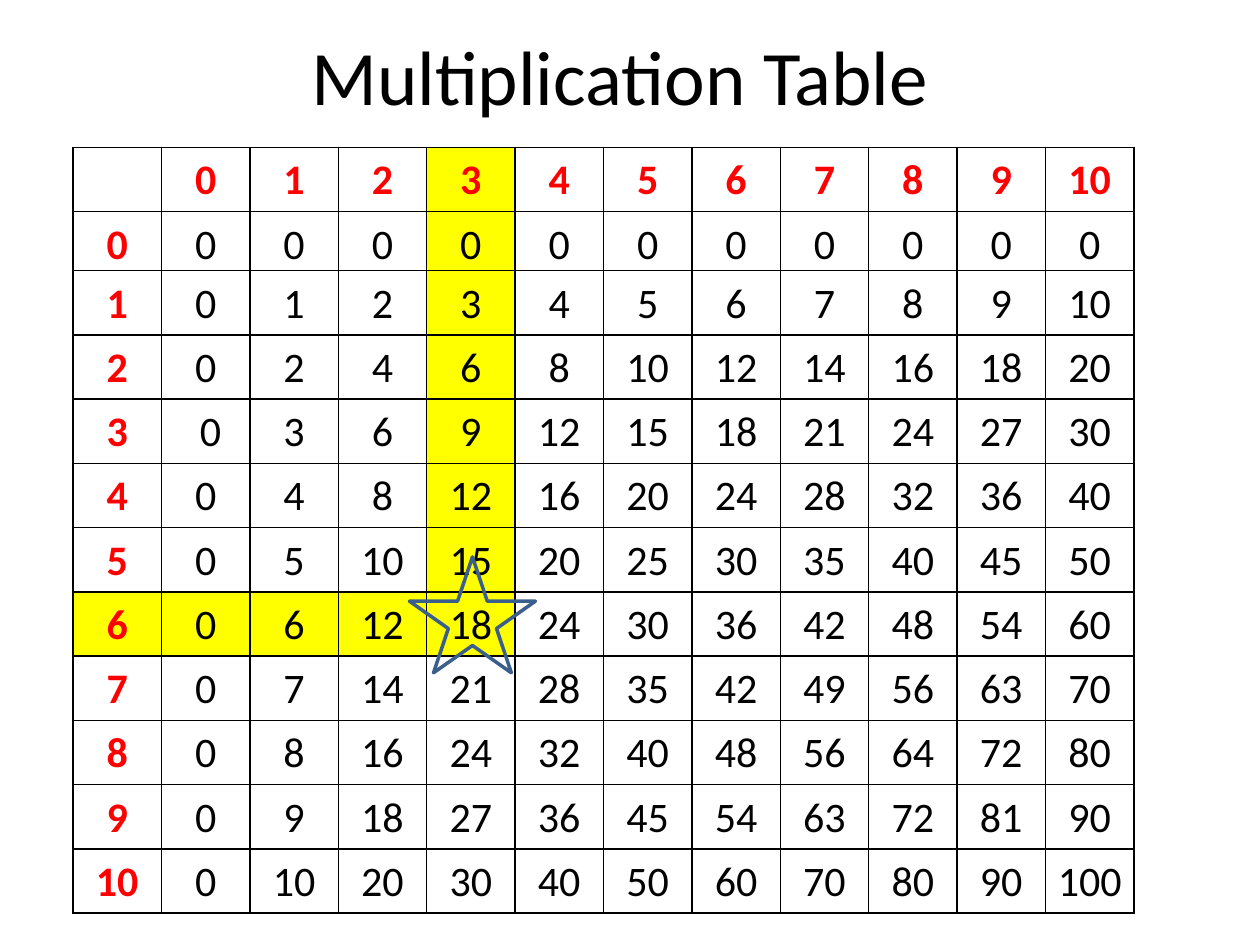
from dataclasses import dataclass

from lxml.etree import SubElement
from pptx import Presentation
from pptx.dml.color import RGBColor
from pptx.enum.shapes import MSO_SHAPE as Shape
from pptx.enum.text import MSO_ANCHOR as Anchor, PP_ALIGN as Align
from pptx.oxml.ns import qn
from pptx.util import Inches, Pt


@dataclass(frozen=True)
class Theme:
    font: str = "Calibri"
    ink: str = "000000"
    factor: str = "FF0000"
    highlight: str = "FFFF00"
    star: str = "3A5F8C"
    title_size: int = 44
    number_size: int = 24
    border_width: int = 1
    star_width: int = 2


THEME = Theme()
FACTORS = range(11)
COLUMN_FACTOR, ROW_FACTOR = 3, 6
SPACED_ZERO = (3, 0)


def style_paragraph(paragraph, size, color, bold=False):
    paragraph.alignment = Align.CENTER
    font = paragraph.font
    font.name = THEME.font
    font.size = Pt(size)
    font.bold = bold
    font.color.rgb = RGBColor.from_string(color)


def add_title(slide, text):
    title = slide.shapes.title
    title.left, title.top = Inches(0.42), Inches(-0.03)
    title.width, title.height = Inches(9), Inches(1.25)
    title.text_frame.text = text
    title.text_frame.vertical_anchor = Anchor.MIDDLE
    style_paragraph(title.text_frame.paragraphs[0], THEME.title_size, THEME.ink)


def add_borders(cell):
    properties = cell._tc.get_or_add_tcPr()
    for side in ("a:lnL", "a:lnR", "a:lnT", "a:lnB"):
        border = SubElement(properties, qn(side), w=str(Pt(THEME.border_width)))
        fill = SubElement(border, qn("a:solidFill"))
        SubElement(fill, qn("a:srgbClr"), val=THEME.ink)


def cell_text(row_factor, column_factor):
    if row_factor is None and column_factor is None:
        return ""
    if row_factor is None:
        return str(column_factor)
    if column_factor is None:
        return str(row_factor)
    product = str(row_factor * column_factor)
    return " " + product if (row_factor, column_factor) == SPACED_ZERO else product


def fill_cell(cell, row, column):
    row_factor = FACTORS[row - 1] if row else None
    column_factor = FACTORS[column - 1] if column else None
    is_factor = row == 0 or column == 0
    cell.margin_left = cell.margin_right = Inches(0.07)
    cell.margin_top = cell.margin_bottom = 0
    cell.text = cell_text(row_factor, column_factor)
    paragraph = cell.text_frame.paragraphs[0]
    paragraph.line_spacing = 1.15
    color = THEME.factor if is_factor else THEME.ink
    style_paragraph(paragraph, THEME.number_size, color, is_factor)

    add_borders(cell)
    star_row, star_column = ROW_FACTOR + 1, COLUMN_FACTOR + 1
    leads_down = column == star_column and row <= star_row
    leads_across = row == star_row and column <= star_column
    if leads_down or leads_across:
        cell.fill.solid()
        cell.fill.fore_color.rgb = RGBColor.from_string(THEME.highlight)
    else:
        cell.fill.background()


def add_multiplication_table(slide):
    count = len(FACTORS) + 1
    table = slide.shapes.add_table(
        count, count, Inches(0.58), Inches(1.17), Inches(8.42), Inches(6.05)
    ).table
    table.first_row = table.horz_banding = False
    for row, table_row in enumerate(table.rows):
        table_row.height = Inches(0.43 if row == 1 else 0.51)
        for column, cell in enumerate(table_row.cells):
            fill_cell(cell, row, column)


def add_star(slide):
    star = slide.shapes.add_shape(
        Shape.STAR_5_POINT, Inches(3.25), Inches(4.42), Inches(1), Inches(0.92)
    )
    star.shadow.inherit = False
    star.fill.background()
    star.line.color.rgb = RGBColor.from_string(THEME.star)
    star.line.width = Pt(THEME.star_width)


def main():
    deck = Presentation()
    deck.slide_width, deck.slide_height = Inches(10), Inches(7.5)
    slide = deck.slides.add_slide(deck.slide_layouts[5])
    add_title(slide, "Multiplication Table")
    add_multiplication_table(slide)
    add_star(slide)
    deck.save("out.pptx")


if __name__ == "__main__":
    main()
